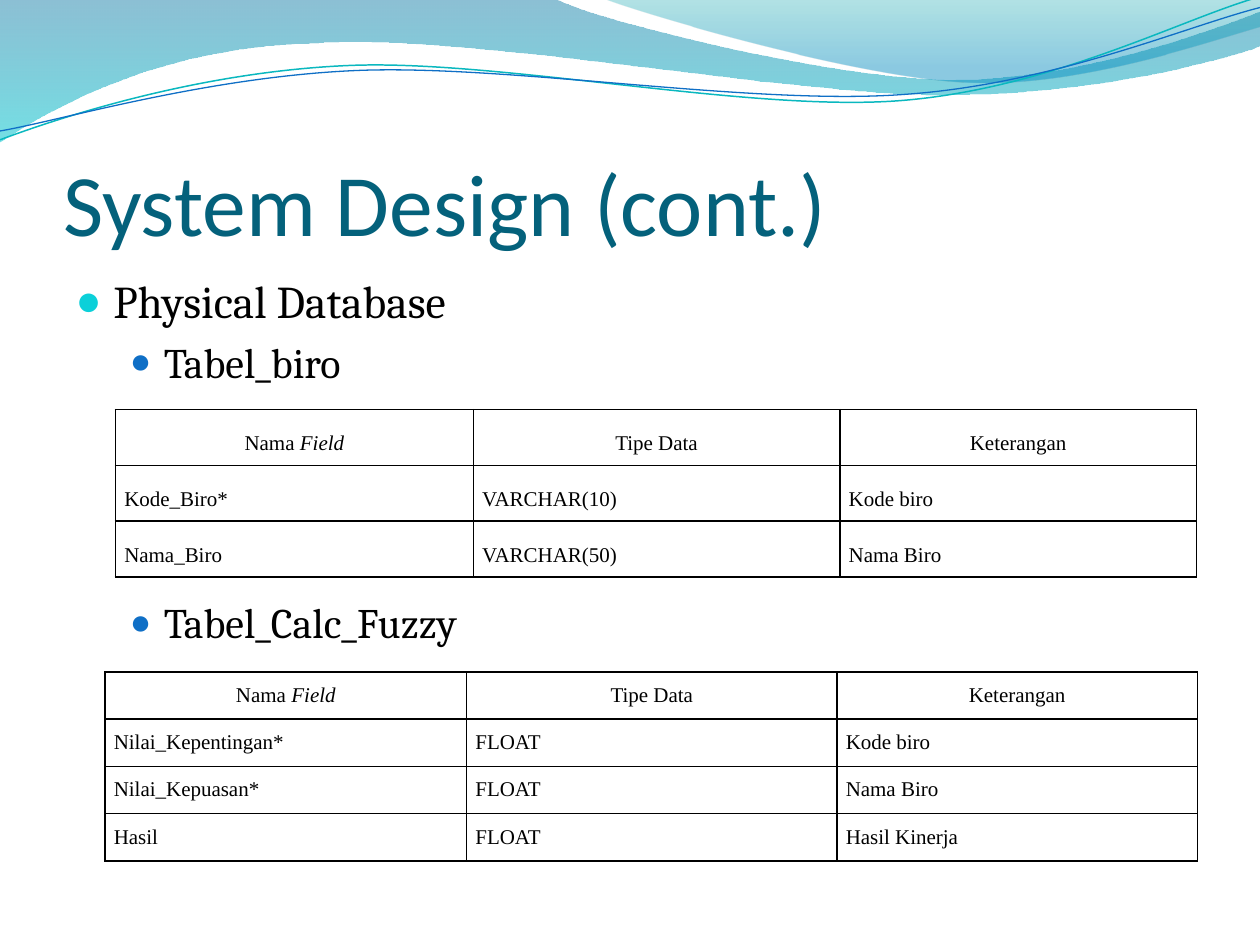
from math import cos, radians, sin

from lxml import etree
from pptx import Presentation
from pptx.dml.color import RGBColor
from pptx.enum.text import MSO_ANCHOR, MSO_AUTO_SIZE, PP_ALIGN
from pptx.oxml.ns import qn
from pptx.util import Inches, Pt

LEFT, CENTER = PP_ALIGN.LEFT, PP_ALIGN.CENTER
TOP, MIDDLE, BOTTOM = MSO_ANCHOR.TOP, MSO_ANCHOR.MIDDLE, MSO_ANCHOR.BOTTOM
NO_FIT = MSO_AUTO_SIZE.NONE

COLORS = {
    "text": "000000", "title": "04617B", "cyan": "0BD0D9", "blue": "0F6FC6",
    "teal_line": "0AB8BF", "band_top": "0074A1", "band_end": "00C6CF",
    "veil_top": "00A1A9", "veil_end": "008BBF",
}
WAVE_TILT = 2.7

BAND = [(0, 0), (4.4, -0.01),
        (4.76, 0.17, 6.64, 0.63, 7.58, 0.63), (8.53, 0.63, 9.58, 0.26, 10, 0.09),
        (10.01, 0.36),
        (9.83, 0.44, 8.7, 0.76, 7.46, 0.75), (6.22, 0.75, 3.82, 0.28, 2.57, 0.34),
        (1.29, 0.36, 0.46, 0.83, -0.01, 1.13), (0, 0)]
VEIL = [(4.79, -0.01),
        (5.09, 0.11, 6.82, 0.62, 7.69, 0.65), (8.56, 0.69, 9.61, 0.32, 10, 0.21),
        (10, 0), (4.79, -0.01)]
TEAL_WAVE = [(0, 1.11), (0.48, 0.93, 1.58, 0.57, 2.77, 0.52),
             (3.95, 0.47, 5.93, 0.89, 7.13, 0.8), (8.33, 0.71, 9.38, 0.15, 9.98, -0.02)]
BLUE_WAVE = [(0, 1.04), (0.47, 0.96, 1.64, 0.61, 2.83, 0.56),
             (4.03, 0.51, 5.97, 0.84, 7.17, 0.75), (8.36, 0.67, 9.41, 0.21, 10, 0.06)]

HEADER = ["Nama *Field", "Tipe Data", "Keterangan"]
BIRO = [["Kode_Biro*", "VARCHAR(10)", "Kode biro"],
        ["Nama_Biro", "VARCHAR(50)", "Nama Biro"]]
FUZZY = [["Nilai_Kepentingan*", "FLOAT", "Kode biro"],
         ["Nilai_Kepuasan*", "FLOAT", "Nama Biro"],
         ["Hasil", "FLOAT", "Hasil Kinerja"]]


def color(name):
    return RGBColor.from_string(COLORS[name])


def pairs(segment):
    return list(zip(segment[::2], segment[1::2]))


def turned(segments, center, degrees):
    c, s = cos(radians(degrees)), sin(radians(degrees))
    mid_x, mid_y = center
    result = []
    for segment in segments:
        moved = []
        for x, y in pairs(segment):
            dx, dy = x - mid_x, y - mid_y
            moved += [mid_x + dx * c - dy * s, mid_y + dx * s + dy * c]
        result.append(moved)
    return result


class SlideBuilder:
    def __init__(self, page):
        self.page = page

    def outline(self, segments, close):
        anchors = [(Inches(s[-2]), Inches(s[-1])) for s in segments]
        builder = self.page.shapes.build_freeform(*anchors[0])
        builder.add_line_segments(anchors[1:], close=close)
        shape = builder.convert_to_shape()
        shape.shadow.inherit = False
        lines = list(shape._element.iter(qn("a:lnTo")))
        for line, segment in zip(lines, segments[1:]):
            if len(segment) == 6:
                curve = etree.Element(qn("a:cubicBezTo"))
                for x, y in pairs(segment):
                    etree.SubElement(curve, qn("a:pt"), x=str(Inches(x) - shape.left),
                                     y=str(Inches(y) - shape.top))
                line.getparent().replace(line, curve)
        return shape

    def wash(self, segments, stops):
        shape = self.outline(segments, True)
        shape.line.fill.background()
        shape.fill.gradient()
        shape.fill.gradient_angle = 270
        for stop, (position, name, opacity) in zip(shape.fill.gradient_stops, stops):
            stop.position = position
            stop.color.rgb = color(name)
        tints = shape._element.spPr.iter(qn("a:srgbClr"))
        for tint, (position, name, opacity) in zip(tints, stops):
            etree.SubElement(tint, qn("a:alpha"), val=str(opacity * 1000))

    def wave(self, segments, center, name, width):
        shape = self.outline(turned(segments, center, WAVE_TILT), False)
        shape.rotation = 360 - WAVE_TILT
        shape.fill.background()
        shape.line.color.rgb = color(name)
        shape.line.width = Pt(width)

    def place(self, box, left, top, width, height):
        box.left, box.top = Inches(left), Inches(top)
        box.width, box.height = Inches(width), Inches(height)
        self.page.shapes._spTree.append(box._element)
        box.text_frame.auto_size = NO_FIT
        return box.text_frame

    def font(self, para, family, size, name="text"):
        para.font.name = family
        para.font.size = Pt(size)
        para.font.color.rgb = color(name)

    def title(self, text, *bounds):
        frame = self.place(self.page.shapes.title, *bounds)
        frame.margin_left = frame.margin_right = frame.margin_bottom = 0
        frame.vertical_anchor = BOTTOM
        frame.text = text
        para = frame.paragraphs[0]
        para.alignment = LEFT
        self.font(para, "Calibri", 50, "title")

    def bullets(self, items, *bounds):
        frame = self.place(self.page.placeholders[1], *bounds)
        frame.text = "\n".join(item[0] for item in items)
        for para, (text, level, size, before) in zip(frame.paragraphs, items):
            para.level = level
            para.space_before = Pt(before)
            self.font(para, "Cambria", size)
            indent, hanging, name, scale = [
                (0.3, -0.3, "cyan", 95), (0.7, -0.27, "blue", 85)][level]
            props = para._p.get_or_add_pPr()
            props.set("marL", str(Inches(indent)))
            props.set("indent", str(Inches(hanging)))
            tint = etree.SubElement(props, qn("a:buClr"))
            etree.SubElement(tint, qn("a:srgbClr"), val=COLORS[name])
            etree.SubElement(props, qn("a:buSzPct"), val=str(scale * 1000))
            etree.SubElement(props, qn("a:buChar"), char="●")
            for late in props.findall(qn("a:defRPr")):
                props.append(late)

    def table(self, rows, left, top, widths, height, anchor):
        table = self.page.shapes.add_table(
            len(rows), len(widths), Inches(left), Inches(top),
            Inches(sum(widths)), Inches(height)).table
        table.first_row = table.horz_banding = False
        for column, width in zip(table.columns, widths):
            column.width = Inches(width)
        for r, row in enumerate(rows):
            table.rows[r].height = Inches(height / len(rows))
            for c, text in enumerate(row):
                self.cell(table.cell(r, c), text, r == 0, anchor)

    def cell(self, cell, text, heading, anchor):
        cell.margin_left = cell.margin_right = Inches(0.07)
        cell.margin_top = cell.margin_bottom = 0
        cell.vertical_anchor = anchor
        para = cell.text_frame.paragraphs[0]
        para.alignment = CENTER if heading else LEFT
        para.line_spacing = 1.5
        self.font(para, "Times New Roman", 12)
        for index, part in enumerate(text.split("*") if heading else [text]):
            span = para.add_run()
            span.text = part
            if index:
                span.font.italic = True
        for side in ("lnL", "lnR", "lnT", "lnB"):
            border = etree.SubElement(
                cell._tc.get_or_add_tcPr(), qn("a:" + side), w=str(Pt(1)))
            fill = etree.SubElement(border, qn("a:solidFill"))
            etree.SubElement(fill, qn("a:srgbClr"), val=COLORS["text"])
        cell.fill.background()


def main():
    deck = Presentation()
    deck.slide_width, deck.slide_height = Inches(10), Inches(7.5)
    slide = SlideBuilder(deck.slides.add_slide(deck.slide_layouts[1]))
    slide.wash(BAND, [(0, "band_top", 45), (1, "band_end", 55)])
    slide.wash(VEIL, [(0, "veil_top", 30), (0.8, "veil_end", 45)])
    slide.wave(TEAL_WAVE, (4.99, 0.57), "teal_line", 0.85)
    slide.wave(BLUE_WAVE, (5, 0.59), "blue", 0.75)
    slide.title("System Design (cont.)", 0.5, 0.77, 9, 1.25)
    slide.bullets([("Physical Database", 0, 26, 5.2), ("Tabel_biro", 1, 24, 4.8),
                   ("Tabel_Calc_Fuzzy", 1, 24, 120)], 0.5, 2.12, 9, 4.8)
    slide.table([HEADER] + BIRO, 11 / 12, 3.25, [2.84, 2.91, 2.83], 1.33, MIDDLE)
    slide.table([HEADER] + FUZZY, 5 / 6, 16 / 3, [2.87, 2.94, 2.86], 1.5, TOP)
    deck.save("out.pptx")


if __name__ == "__main__":
    main()
